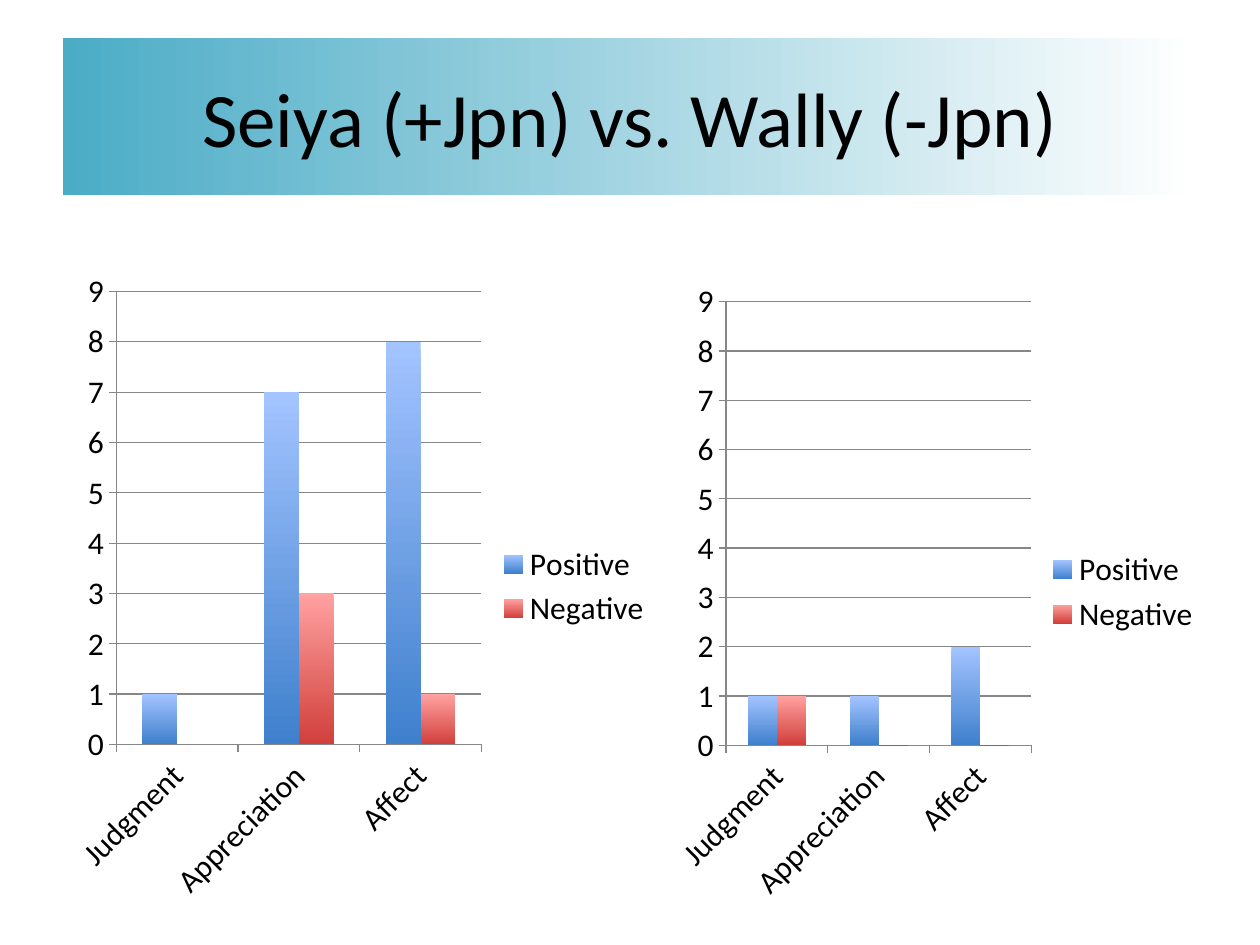
from pptx import Presentation
from pptx.chart.data import CategoryChartData
from pptx.dml.color import RGBColor
from pptx.enum.chart import XL_CHART_TYPE, XL_LEGEND_POSITION, XL_TICK_MARK
from pptx.enum.shapes import MSO_SHAPE
from pptx.enum.text import MSO_ANCHOR, PP_ALIGN
from pptx.util import Cm, Pt

COLUMNS = XL_CHART_TYPE.COLUMN_CLUSTERED
LEGEND_RIGHT = XL_LEGEND_POSITION.RIGHT
TICK_OUTSIDE = XL_TICK_MARK.OUTSIDE
RECTANGLE = MSO_SHAPE.RECTANGLE
MIDDLE = MSO_ANCHOR.MIDDLE
CENTER = PP_ALIGN.CENTER

FONT = "Calibri"
COLORS = {
    "text": "000000",
    "axis": "878787",
    "banner": "4BACC6",
    "white": "FFFFFF",
    "positive_top": "A3C4FF",
    "positive_bottom": "3F80CD",
    "negative_top": "FFA2A0",
    "negative_bottom": "D13F3B",
}
CATEGORIES = ("Judgment", "Appreciation", "Affect")


def color(name):
    return RGBColor.from_string(COLORS[name])


def style_font(font, size):
    font.name = FONT
    font.size = Pt(size)
    font.color.rgb = color("text")


def fill_gradient(fill, start, end, angle):
    """Blend two colours; the angle runs counter-clockwise from left to right."""
    fill.gradient()
    fill.gradient_angle = angle
    for stop, position, name in zip(fill.gradient_stops, (0, 1), (start, end)):
        stop.position = position
        stop.color.rgb = color(name)


def style_axis(axis):
    axis.major_tick_mark = TICK_OUTSIDE
    axis.format.line.color.rgb = color("axis")
    axis.format.line.width = Pt(0.75)
    style_font(axis.tick_labels.font, 18)


def add_column_chart(page, left, top, width, height, positive, negative):
    data = CategoryChartData()
    data.categories = CATEGORIES
    data.add_series("Positive", positive)
    data.add_series("Negative", negative)
    chart = page.shapes.add_chart(
        COLUMNS, Cm(left), Cm(top), Cm(width), Cm(height), data
    ).chart
    style_font(chart.font, 10)
    chart.has_title = False

    chart.has_legend = True
    chart.legend.position = LEGEND_RIGHT
    chart.legend.include_in_layout = False
    style_font(chart.legend.font, 18)

    style_axis(chart.category_axis)
    value_axis = chart.value_axis
    style_axis(value_axis)
    value_axis.minimum_scale = 0
    value_axis.maximum_scale = 9
    value_axis.major_unit = 1
    value_axis.has_major_gridlines = True
    grid_line = value_axis.major_gridlines.format.line
    grid_line.color.rgb = color("axis")
    grid_line.width = Pt(0.75)

    plot = chart.plots[0]
    plot.gap_width = 150
    plot.overlap = 0
    plot.vary_by_categories = False
    for series in plot.series:
        tone = series.name.lower()
        series.invert_if_negative = False
        fill_gradient(series.format.fill, f"{tone}_top", f"{tone}_bottom", 270)


def add_title_banner(page, text):
    banner = page.shapes.add_shape(
        RECTANGLE, Cm(1.27), Cm(0.76), Cm(22.86), Cm(3.18)
    )
    banner.shadow.inherit = False
    fill_gradient(banner.fill, "banner", "white", 0)
    banner.line.fill.background()
    frame = banner.text_frame
    frame.word_wrap = True
    frame.vertical_anchor = MIDDLE
    frame.text = text
    para = frame.paragraphs[0]
    para.alignment = CENTER
    style_font(para.runs[0].font, 44)


def main():
    deck = Presentation()
    deck.slide_width = Cm(25.4)
    deck.slide_height = Cm(19.05)
    page = deck.slides.add_slide(deck.slide_layouts[6])
    add_column_chart(page, 13.39, 5.44, 11.07, 12.98, (1, 1, 2), (1, 0, 0))
    add_column_chart(page, 1.27, 5.23, 12.12, 13.18, (1, 7, 8), (0, 3, 1))
    add_title_banner(page, "Seiya (+Jpn) vs. Wally (-Jpn)")
    deck.save("out.pptx")


if __name__ == "__main__":
    main()
